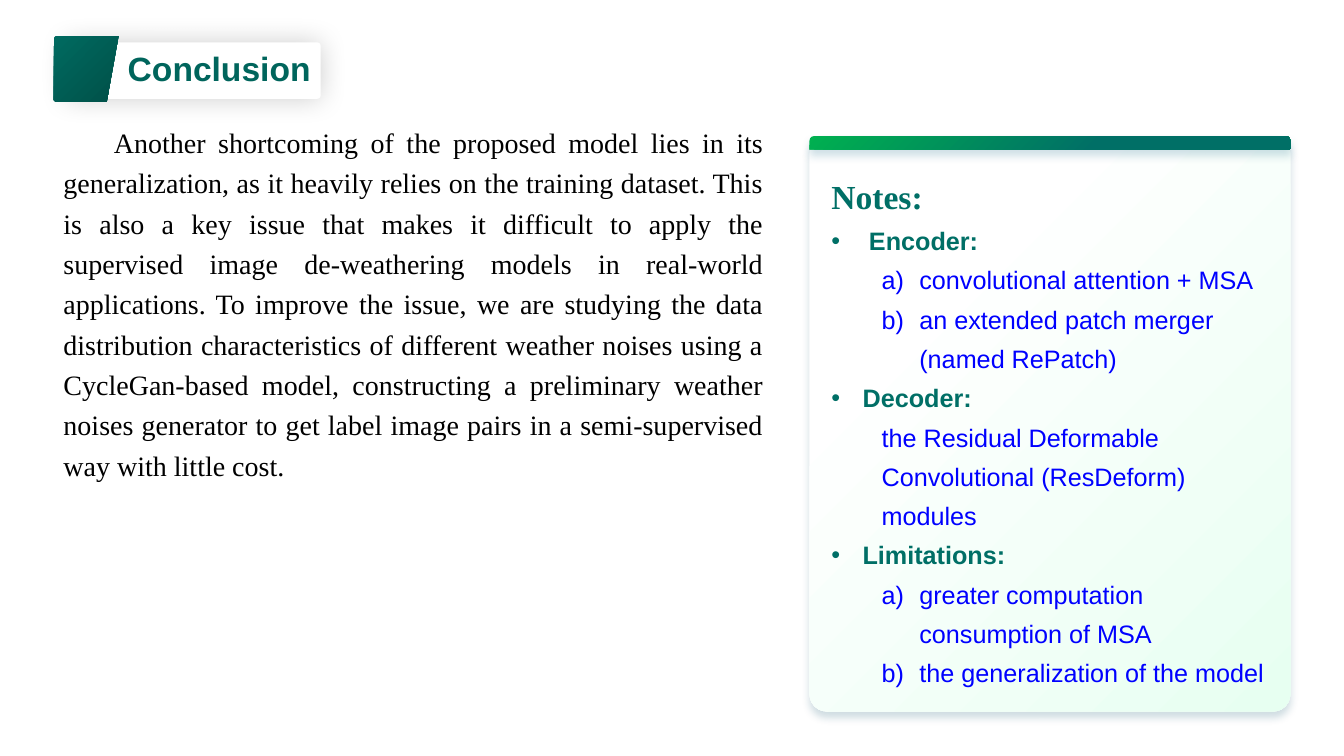
from lxml.etree import SubElement
from pptx import Presentation
from pptx.dml.color import RGBColor
from pptx.enum.shapes import MSO_SHAPE
from pptx.enum.text import MSO_AUTO_SIZE, PP_ALIGN
from pptx.oxml.ns import qn
from pptx.util import Cm, Pt

TEAL, BLUE, BLACK, WHITE = "006F66", "0000FF", "000000", "FFFFFF"
SANS, SERIF = "Arial", "Times New Roman"

CONCLUSION = (
    "Another shortcoming of the proposed model lies in its generalization, as it heavily "
    "relies on the training dataset. This is also a key issue that makes it difficult to "
    "apply the supervised image de-weathering models in real-world applications. To improve "
    "the issue, we are studying the data distribution characteristics of different weather "
    "noises using a CycleGan-based model, constructing a preliminary weather noises generator "
    "to get label image pairs in a semi-supervised way with little cost. "
)

# heading, heading indent in cm, heading level, lettered?, points
NOTES = [
    ("Encoder:", 0.95, 0, True,
     ["convolutional attention + MSA", "an extended patch merger (named RePatch)"]),
    ("Decoder:", 0.79, 0, False,
     ["the Residual Deformable Convolutional (ResDeform) modules"]),
    ("Limitations:", 0.79, 1, True,
     ["greater computation consumption of MSA", "the generalization of the model"]),
]


def rgb(value):
    return RGBColor.from_string(value)


def paint_gradient(shape, stops):
    """Fill with two (position, colour) stops running to the lower right."""
    shape.fill.gradient()
    shape.fill.gradient_angle = 315
    for stop, (position, colour) in zip(shape.fill.gradient_stops, stops):
        stop.position = position
        stop.color.rgb = rgb(colour)


def add_shadow(shape, colour, blur, distance=0, direction=0):
    """Give a soft 20 % shadow; blur and distance in points, direction in degrees."""
    effects = shape._element.spPr.find(qn("a:effectLst"))
    shadow = SubElement(effects, qn("a:outerShdw"), blurRad=str(Pt(blur)),
                        dist=str(Pt(distance)), dir=str(direction * 60000),
                        algn="ctr", rotWithShape="0")
    tint = SubElement(shadow, qn("a:srgbClr"), val=colour)
    SubElement(tint, qn("a:alpha"), val="20000")


def add_panel(slide, kind, left, top, width, height, corners):
    panel = slide.shapes.add_shape(kind, Cm(left), Cm(top), Cm(width), Cm(height))
    for index, corner in enumerate(corners):
        panel.adjustments[index] = corner
    panel.shadow.inherit = False
    panel.line.fill.background()
    return panel


def add_slanted_tab(slide, left, top, width, height, slant):
    right, bottom, bevel = left + width, top + height, 0.05
    outline = [(right, top), (right - slant, bottom), (left + bevel, bottom),
               (left, bottom - bevel), (left, top + bevel), (left + bevel, top)]
    start, *others = [(Cm(x), Cm(y)) for x, y in outline]
    builder = slide.shapes.build_freeform(*start)
    builder.add_line_segments(others, close=True)
    tab = builder.convert_to_shape()
    tab.shadow.inherit = False
    tab.line.fill.background()
    paint_gradient(tab, [(0, "006A60"), (1, "005048")])


def add_text_frame(slide, left, top, width, height):
    frame = slide.shapes.add_textbox(Cm(left), Cm(top), Cm(width), Cm(height)).text_frame
    frame.word_wrap = True
    frame.auto_size = MSO_AUTO_SIZE.SHAPE_TO_FIT_TEXT
    return frame


def write(paragraph, text, size, font, colour, bold=False, spacing=1.0):
    paragraph.line_spacing = spacing
    run = paragraph.add_run()
    run.text = text
    run.font.size = Pt(size)
    run.font.name = font
    run.font.bold = bold
    run.font.color.rgb = rgb(colour)


def indent(paragraph, margin, first_line):
    properties = paragraph._p.get_or_add_pPr()
    properties.set("marL", str(Cm(margin)))
    properties.set("indent", str(Cm(first_line)))
    return properties


def add_dot(properties):
    SubElement(properties, qn("a:buFont"), typeface=SANS)
    SubElement(properties, qn("a:buChar"), char="•")


def add_letter(properties):
    SubElement(properties, qn("a:buFont"), typeface="+mj-lt")
    SubElement(properties, qn("a:buAutoNum"), type="alphaLcParenR")


def add_title(slide):
    plate = add_panel(slide, MSO_SHAPE.ROUNDED_RECTANGLE, 1.68, 1.07, 6.4, 1.42, [0.057])
    plate.fill.solid()
    plate.fill.fore_color.rgb = rgb(WHITE)
    add_shadow(plate, BLACK, 20)
    add_slanted_tab(slide, 1.35, 0.91, 1.64, 1.66, 0.3)
    title = add_text_frame(slide, 2.97, 1.09, 5.11, 1.27)
    write(title.paragraphs[0], "Conclusion", 24, SANS, "00655C", bold=True)


def add_conclusion(slide):
    paragraph = add_text_frame(slide, 1.35, 2.87, 18.14, 9.4).paragraphs[0]
    paragraph.alignment = PP_ALIGN.JUSTIFY
    indent(paragraph, 0, 1.27)
    write(paragraph, CONCLUSION, 20, SERIF, BLACK, spacing=1.2)


def add_notes_card(slide):
    left, top, width = 20.4, 3.43, 12.12
    card = add_panel(slide, MSO_SHAPE.ROUNDED_RECTANGLE, left, top, width, 14.5, [0.036])
    paint_gradient(card, [(0.25, WHITE), (1, "E7FFF1")])
    add_shadow(card, "0F526C", 6, 4, 90)
    band = add_panel(slide, MSO_SHAPE.ROUND_2_SAME_RECTANGLE, left, top, width, 0.34,
                     [0.349, 0])
    paint_gradient(band, [(0, "00B050"), (0.6, TEAL)])
    add_shadow(band, "116584", 6, 4, 90)

    notes = add_text_frame(slide, 20.7, 4.01, 11.53, 13.49)
    write(notes.paragraphs[0], "Notes:", 24, SERIF, TEAL, bold=True, spacing=1.3)
    for heading, hanging, level, lettered, points in NOTES:
        paragraph = notes.add_paragraph()
        paragraph.level = level
        add_dot(indent(paragraph, hanging, -hanging))
        write(paragraph, heading, 18, SANS, TEAL, bold=True, spacing=1.3)
        for point in points:
            paragraph = notes.add_paragraph()
            paragraph.level = level + 1
            if lettered:
                add_letter(indent(paragraph, 2.22, -0.95))
            else:
                indent(paragraph, 1.27, 0)
            write(paragraph, point, 18, SANS, BLUE, spacing=1.3)


def main():
    deck = Presentation()
    deck.slide_width, deck.slide_height = Cm(33.87), Cm(19.05)
    slide = deck.slides.add_slide(deck.slide_layouts[6])
    add_title(slide)
    add_conclusion(slide)
    add_notes_card(slide)
    deck.save("out.pptx")


if __name__ == "__main__":
    main()
